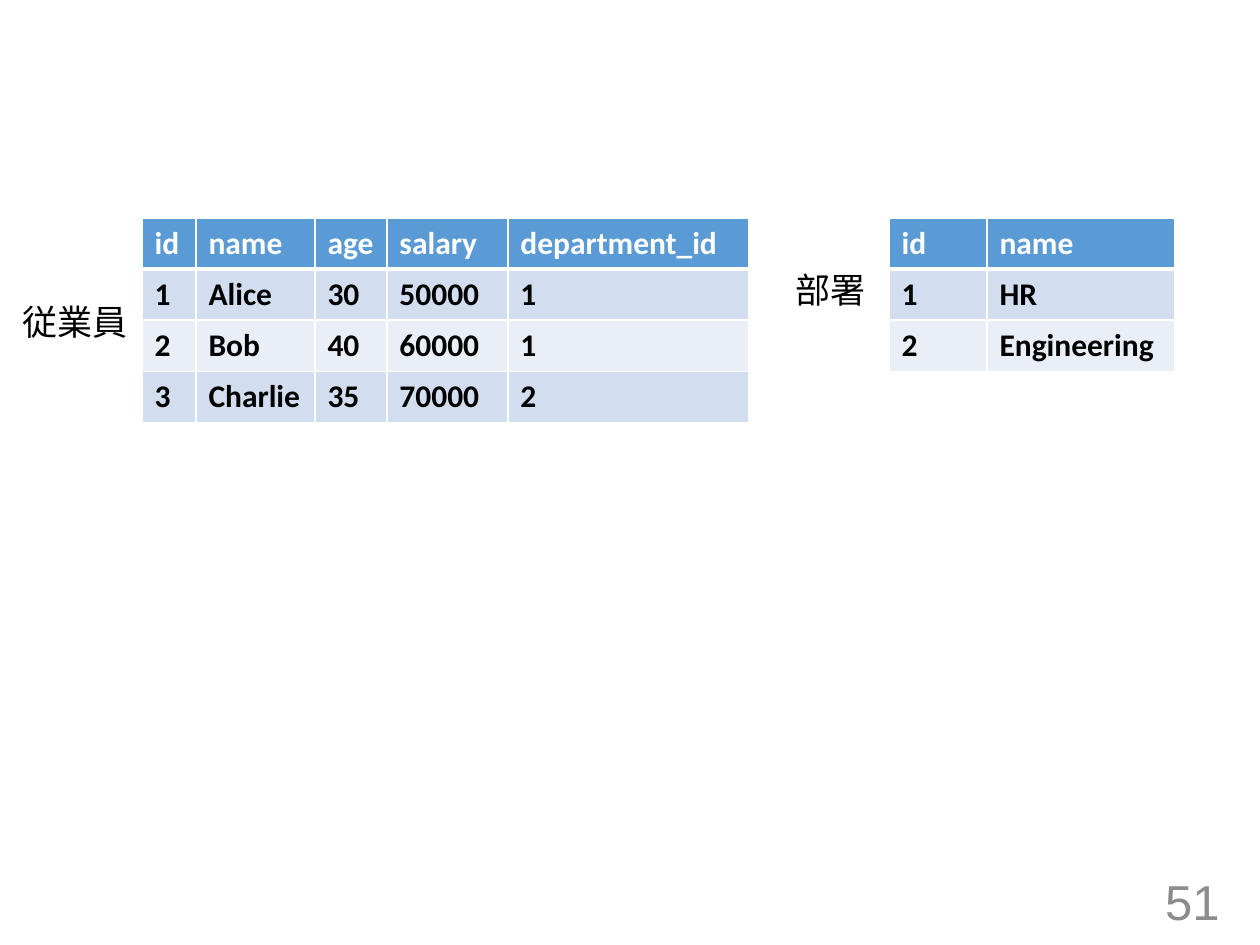
from lxml.etree import SubElement
from pptx import Presentation
from pptx.dml.color import RGBColor
from pptx.enum.text import MSO_ANCHOR, MSO_AUTO_SIZE, PP_ALIGN
from pptx.oxml.ns import qn
from pptx.util import Pt

PX = 914400 // 126  # EMU per px
WHITE = RGBColor(0xFF, 0xFF, 0xFF)
BLACK = RGBColor(0x00, 0x00, 0x00)
GRAY = RGBColor(0x8C, 0x8C, 0x8C)
HEADER = RGBColor(0x5B, 0x9B, 0xD5)
BANDS = [RGBColor(0xEA, 0xEF, 0xF7), RGBColor(0xD2, 0xDE, 0xEF)]
ROW_H = 51


def style_run(r, font, size, color, bold=False):
    r.font.name = font
    r.font.size = Pt(size)
    r.font.color.rgb = color
    r.font.bold = bold


def add_border(cell, side, width):
    ln = SubElement(cell._tc.get_or_add_tcPr(), qn(f"a:{side}"), w=str(Pt(width)))
    fill = SubElement(ln, qn("a:solidFill"))
    SubElement(fill, qn("a:srgbClr"), val=str(WHITE))


prs = Presentation()
prs.slide_width = 1260 * PX
prs.slide_height = 945 * PX
s = prs.slides.add_slide(prs.slide_layouts[6])

# Tables: left, column widths, rows
employees = [
    ["id", "name", "age", "salary", "department_id"],
    ["1", "Alice", "30", "50000", "1"],
    ["2", "Bob", "40", "60000", "1"],
    ["3", "Charlie", "35", "70000", "2"],
]
departments = [["id", "name"], ["1", "HR"], ["2", "Engineering"]]
tables = [
    (142, [54, 119, 72, 121, 241], employees),
    (889, [98, 188], departments),
]
for left, widths, rows in tables:
    table = s.shapes.add_table(
        len(rows), len(widths), left * PX, 218 * PX,
        sum(widths) * PX, len(rows) * ROW_H * PX).table
    for col, width in zip(table.columns, widths):
        col.width = width * PX
    for i, row in enumerate(rows):
        table.rows[i].height = ROW_H * PX
        for j, text in enumerate(row):
            cell = table.cell(i, j)
            cell.text = text
            cell.vertical_anchor = MSO_ANCHOR.MIDDLE
            style_run(cell.text_frame.paragraphs[0].runs[0], "Calibri", 18,
                      BLACK if i else WHITE, True)
            # Thick rule between header and body
            top, bottom = (3 if i == 1 else 1), (1 if i else 3)
            for side, w in [("lnL", 1), ("lnR", 1), ("lnT", top), ("lnB", bottom)]:
                add_border(cell, side, w)
            cell.fill.solid()
            cell.fill.fore_color.rgb = BANDS[i % 2] if i else HEADER

# Table labels
for text, x, y, w in [("従業員", 10, 294, 131), ("部署", 783, 262, 96)]:
    tf = s.shapes.add_textbox(x * PX, y * PX, w * PX, 55 * PX).text_frame
    tf.text = text
    tf.word_wrap = False
    tf.auto_size = MSO_AUTO_SIZE.SHAPE_TO_FIT_TEXT
    style_run(tf.paragraphs[0].runs[0], "Calibri", 20, BLACK)

# Page number
tf = s.shapes.add_textbox(949 * PX, 876 * PX, 283 * PX, 50 * PX).text_frame
tf.text = "51"
tf.word_wrap = True
tf.vertical_anchor = MSO_ANCHOR.MIDDLE
p = tf.paragraphs[0]
p.alignment = PP_ALIGN.RIGHT
style_run(p.runs[0], "Arial", 28, GRAY)

prs.save("out.pptx")
